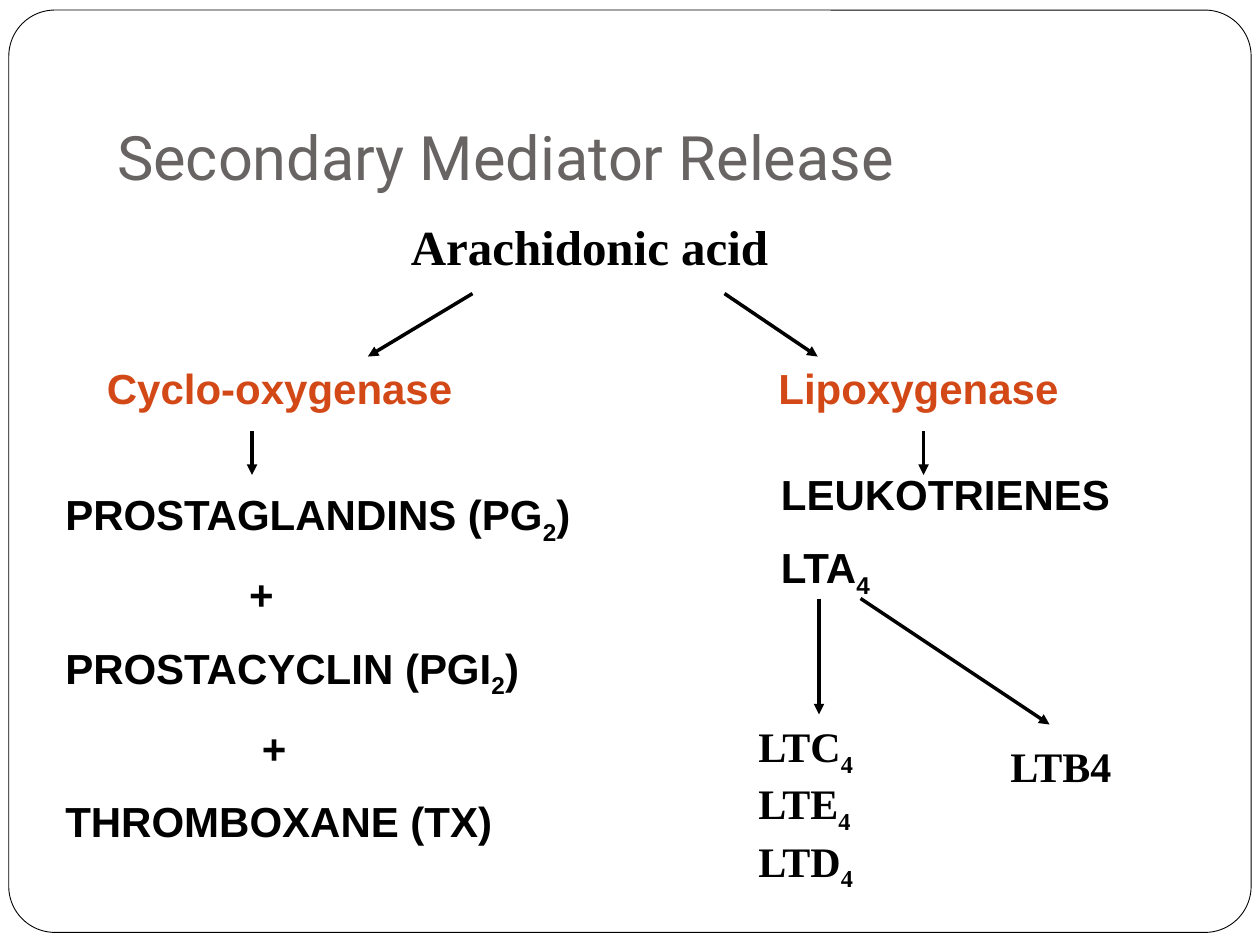
from lxml import etree
from pptx import Presentation
from pptx import util as u
from pptx.dml.color import RGBColor
from pptx.enum import shapes, text
from pptx.oxml.ns import qn

COLORS = {"ink": "000000", "title": "696464", "enzyme": "D34817", "paper": "FFFFFF"}
SANS, SERIF = "Arial", "Times New Roman"

deck = Presentation()
deck.slide_width, deck.slide_height = u.Inches(10), u.Inches(7.5)
page = deck.slides.add_slide(deck.slide_layouts[1])


def place(shape, left, top, width, height):
    shape.left, shape.top = u.Inches(left), u.Inches(top)
    shape.width, shape.height = u.Inches(width), u.Inches(height)


def write(frame, lines, font, size=24, color="ink", bold=True, gap=0):
    """Write (text, indent) lines; every second part between bars is a subscript."""
    for number, (line, indent) in enumerate(lines):
        para = frame.paragraphs[0] if number == 0 else frame.add_paragraph()
        properties = para._p.get_or_add_pPr()
        properties.set("marL", str(u.Inches(indent)))
        properties.set("indent", "0")
        para.space_before = u.Pt(gap if number else 0)
        para.alignment = text.PP_ALIGN.LEFT
        etree.SubElement(properties, qn("a:buNone"))
        para.font.name, para.font.size, para.font.bold = font, u.Pt(size), bold
        para.font.color.rgb = RGBColor.from_string(COLORS[color])
        for part, words in enumerate(line.split("|")):
            if words:
                span = para.add_run()
                span.text = words
                if part % 2:
                    span._r.get_or_add_rPr().set("baseline", "-25000")


# Rounded page frame, behind everything else
border = page.shapes.add_shape(shapes.MSO_SHAPE.ROUNDED_RECTANGLE, 0, 0, 0, 0)
place(border, 0.07, 0.08, 9.86, 7.32)
border.adjustments[0] = 0.05
border.shadow.inherit = False
border.fill.solid()
border.fill.fore_color.rgb = RGBColor.from_string(COLORS["paper"])
border.line.color.rgb = RGBColor.from_string(COLORS["ink"])
border.line.width = u.Pt(0.5)
page.shapes._spTree.insert(2, border._element)

# Title and starting substance
title, body = page.placeholders
place(title, 0.83, 0.33, 8.5, 1.25)
title.text_frame.vertical_anchor = text.MSO_ANCHOR.BOTTOM
write(title.text_frame, [("Secondary Mediator Release", 0)], "Roboto", 35, "title", False)
place(body, 0.42, 1.67, 8.98, 4.25)
write(body.text_frame, [("Arachidonic acid", 2.74)], SERIF, 28)

# Enzymes and their products
boxes = [
    ((6.08, 2.83, 3.35, 0.5), SANS, "enzyme", 0, [("Lipoxygenase", 0)]),
    ((6.1, 3.67, 3.9, 2.1), SANS, "ink", 13, [("LEUKOTRIENES", 0), ("LTA|4", 0)]),
    ((0.75, 2.83, 4.24, 0.5), SANS, "enzyme", 0, [("Cyclo-oxygenase", 0)]),
    ((0.42, 3.83, 4.57, 2.89), SANS, "ink", 13, [
        ("PROSTAGLANDINS (PG|2|)", 0), ("+", 1.46),
        ("PROSTACYCLIN (PGI|2|)", 0), ("+", 1.56),
        ("THROMBOXANE (TX)", 0)]),
    ((5.92, 5.67, 1.92, 1.83), SERIF, "ink", 0, [("LTC|4", 0), ("LTE|4", 0), ("LTD|4", 0)]),
    ((7.92, 5.83, 1.03, 0.9), SERIF, "ink", 0, [("LTB4", 0)]),
]
for area, font, color, gap, lines in boxes:
    box = page.shapes.add_textbox(*map(u.Inches, area))
    box.text_frame.word_wrap = True
    write(box.text_frame, lines, font, color=color, gap=gap)

# Pathway arrows
arrows = [
    (3.75, 2.33, 2.92, 2.83), (5.75, 2.33, 6.49, 2.83),
    (7.33, 3.42, 7.33, 3.77), (2, 3.42, 2, 3.77),
    (6.83, 4.75, 8.33, 5.75), (6.5, 4.75, 6.5, 5.67),
]
for ends in arrows:
    arrow = page.shapes.add_connector(shapes.MSO_CONNECTOR.STRAIGHT, *map(u.Inches, ends))
    arrow.line.color.rgb = RGBColor.from_string(COLORS["ink"])
    arrow.line.width = u.Pt(2)
    etree.SubElement(arrow.line._get_or_add_ln(), qn("a:tailEnd"), type="triangle")
    etree.SubElement(arrow._element.spPr, qn("a:effectLst"))

deck.save("out.pptx")
